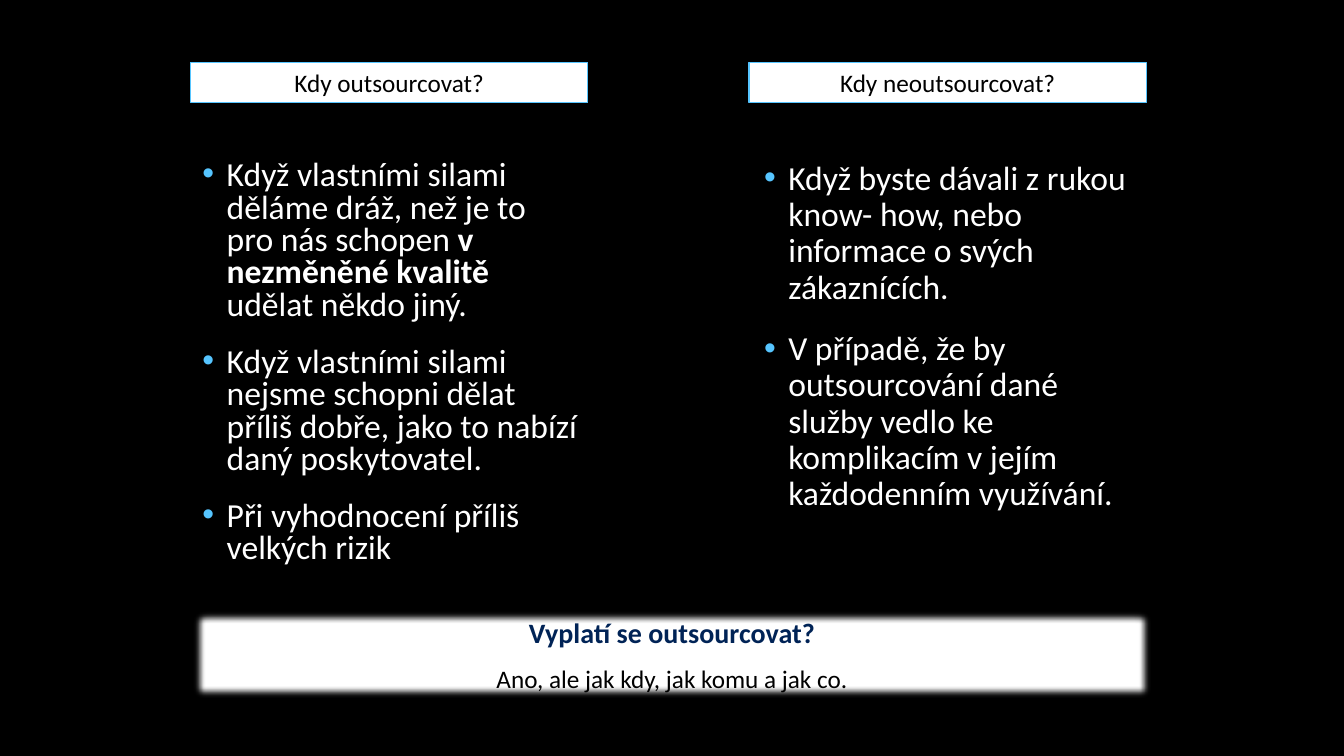
from dataclasses import dataclass

from lxml.etree import SubElement
from pptx import Presentation
from pptx.dml.color import RGBColor
from pptx.enum.shapes import MSO_SHAPE
from pptx.enum.text import MSO_ANCHOR, PP_ALIGN
from pptx.oxml.ns import qn
from pptx.util import Inches, Pt


@dataclass(frozen=True)
class Theme:
    font: str = "Calibri"
    back: str = "000000"
    panel: str = "FFFFFF"
    dark: str = "000000"
    light: str = "FFFFFF"
    navy: str = "002356"
    accent: str = "56C5FF"
    label: int = 18
    lead: int = 20
    body: int = 24
    gap: int = 18


class Deck:
    def __init__(self, theme):
        self.theme = theme
        self.show = Presentation()
        self.show.slide_width = Inches(13.33)
        self.show.slide_height = Inches(7.5)
        self.slide = self.show.slides.add_slide(self.show.slide_layouts[6])
        fill = self.slide.background.fill
        fill.solid()
        fill.fore_color.rgb = RGBColor.from_string(theme.back)

    def run(self, para, text, size, color, bold=False):
        run = para.add_run()
        run.text = text
        font = run.font
        font.name = self.theme.font
        font.size = Pt(size)
        font.bold = bold
        font.color.rgb = RGBColor.from_string(color)

    def panel(self, area, lines, gap=0, soft=0):
        box = self.slide.shapes.add_shape(MSO_SHAPE.RECTANGLE, *map(Inches, area))
        box.shadow.inherit = False
        box.fill.solid()
        box.fill.fore_color.rgb = RGBColor.from_string(self.theme.panel)
        box.line.color.rgb = RGBColor.from_string(self.theme.accent)
        box.line.width = Pt(1)
        if soft:
            effects = box._element.spPr.find(qn("a:effectLst"))
            SubElement(effects, qn("a:softEdge"), rad=str(Inches(soft)))
        frame = box.text_frame
        frame.word_wrap = True
        frame.vertical_anchor = MSO_ANCHOR.MIDDLE
        for i, line in enumerate(lines):
            para = frame.add_paragraph() if i else frame.paragraphs[0]
            para.alignment = PP_ALIGN.CENTER
            para.space_before = Pt(gap if i else 0)
            self.run(para, *line)

    def bullet(self, para):
        props = para._p.get_or_add_pPr()
        props.set("marL", str(Inches(0.24)))
        props.set("indent", str(-Inches(0.24)))
        color = SubElement(props, qn("a:buClr"))
        SubElement(color, qn("a:srgbClr"), val=self.theme.accent)
        SubElement(props, qn("a:buFont"), typeface="Arial")
        SubElement(props, qn("a:buChar"), char="•")

    def points(self, area, items, pitch):
        frame = self.slide.shapes.add_textbox(*map(Inches, area)).text_frame
        frame.word_wrap = True
        for i, item in enumerate(items):
            para = frame.add_paragraph() if i else frame.paragraphs[0]
            self.bullet(para)
            para.line_spacing = pitch
            para.space_before = Pt(self.theme.gap if i else 0)
            for text, bold in item:
                self.run(para, text, self.theme.body, self.theme.light, bold)

    def save(self):
        self.show.save("out.pptx")


def main():
    theme = Theme()
    deck = Deck(theme)
    deck.panel(
        (1.91, 6.05, 9.51, 0.88),
        [
            ("Vyplatí se outsourcovat?", theme.lead, theme.navy, True),
            ("Ano, ale jak kdy, jak komu a jak co.", theme.label, theme.dark),
        ],
        gap=10,
        soft=0.07,
    )
    pros = [
        [
            ("Když vlastními silami děláme dráž, než je to pro nás schopen ", False),
            ("v nezměněné kvalitě", True),
            (" udělat někdo jiný.", False),
        ],
        [("Když vlastními silami nejsme schopni dělat příliš dobře, "
          "jako to nabízí daný poskytovatel.", False)],
        [("Při vyhodnocení příliš velkých rizik", False)],
    ]
    cons = [
        [("Když byste dávali z rukou know- how, nebo informace "
          "o svých zákaznících.", False)],
        [("V případě, že by outsourcování dané služby vedlo ke "
          "komplikacím v jejím každodenním využívání.", False)],
    ]
    columns = [
        (1.89, "Kdy outsourcovat?", 1.91, pros, 0.8),
        (7.43, "Kdy neoutsourcovat?", 7.48, cons, 0.9),
    ]
    for head, title, left, items, pitch in columns:
        deck.panel((head, 0.62, 3.94, 0.4), [(title, theme.label, theme.dark)])
        deck.points((left, 1.55, 3.92, 4.5), items, pitch)
    deck.save()


if __name__ == "__main__":
    main()
